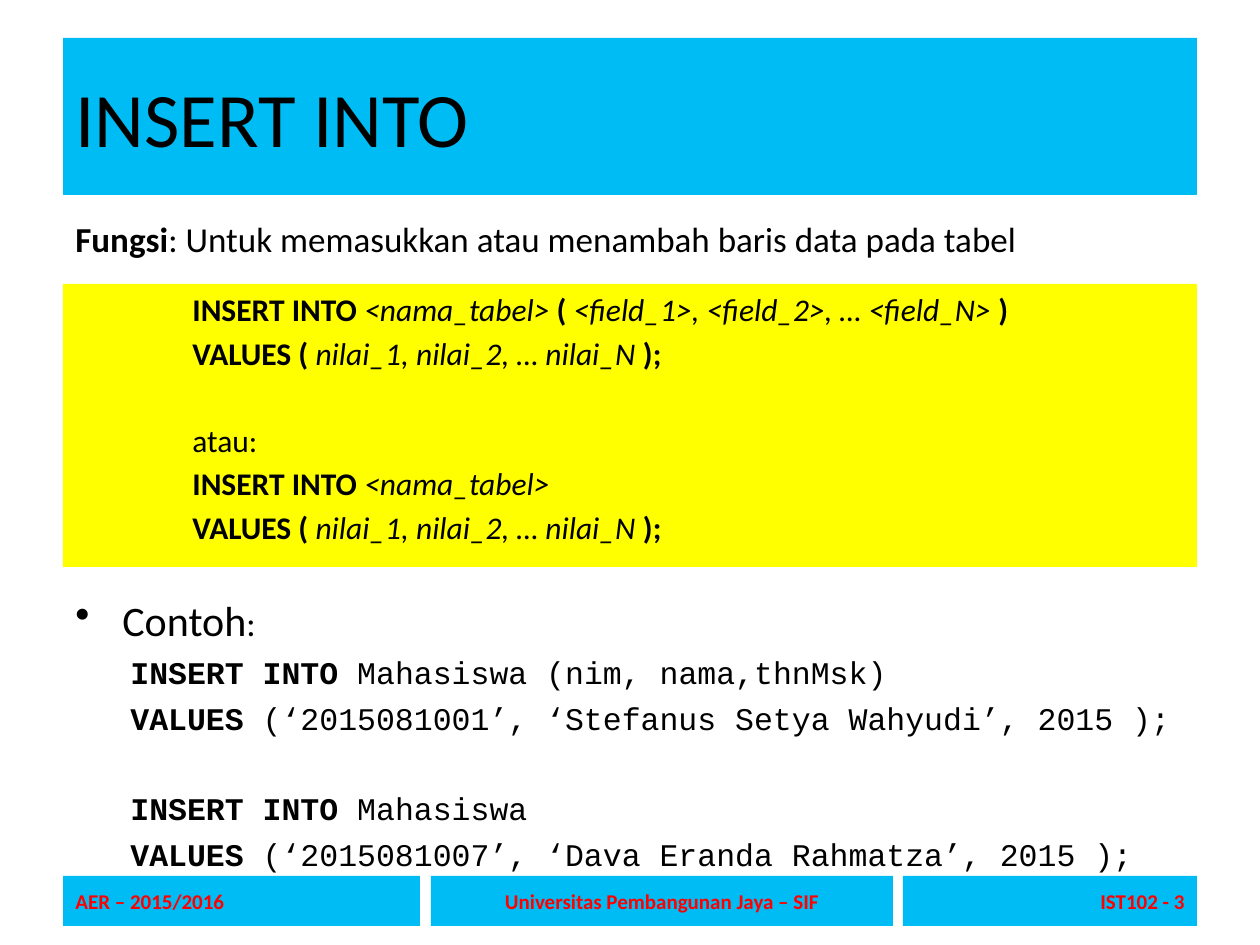
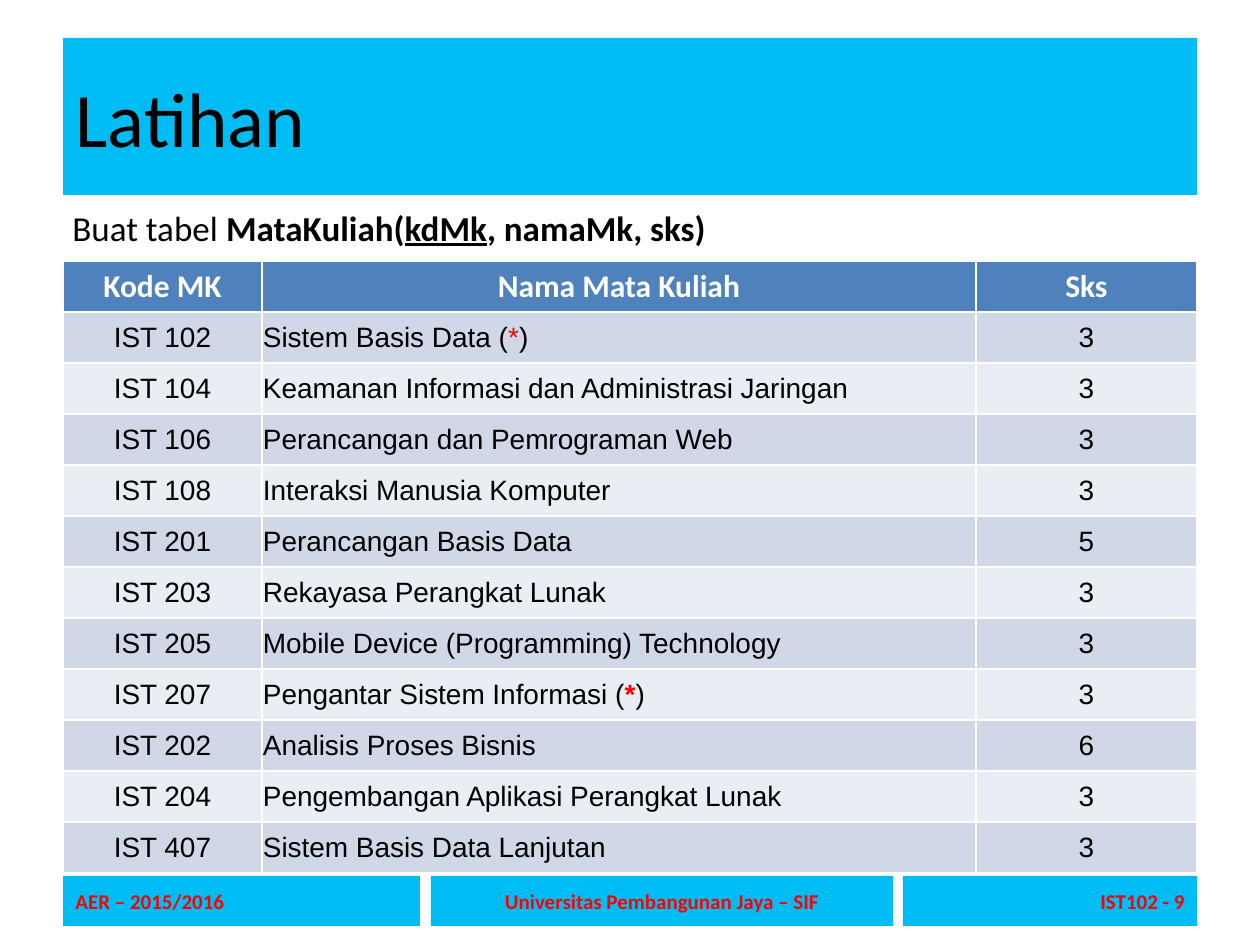
import pptx
import pptx.dml.color
import pptx.enum.shapes
import pptx.enum.text
import pptx.oxml
import pptx.oxml.ns
import pptx.util

# Shared look
SCALE = 914400 / 126  # EMU per px
CYAN, YELLOW, RED, BLACK, WHITE = "00BCF4", "FFFF00", "FF0000", "000000", "FFFFFF"
HEADER_BLUE, BANDS = "4F81BD", ("D0D8E8", "E9EDF4")
LEFT, WIDTH = 63, 1134
FOOTER_TOP, FOOTER_HEIGHT = 876, 50
FOOTER_SPANS = [(63, 357), (431, 462), (903, 294)]
ALIGN = {"l": pptx.enum.text.PP_ALIGN.LEFT, "c": pptx.enum.text.PP_ALIGN.CENTER,
         "r": pptx.enum.text.PP_ALIGN.RIGHT}
MIDDLE = pptx.enum.text.MSO_ANCHOR.MIDDLE
TOP = pptx.enum.text.MSO_ANCHOR.TOP

# Content: a paragraph is a list of (text, style); styles are b, i, u, r (red)
FOOTER = ("AER – 2015/2016", "Universitas Pembangunan Jaya – SIF", "IST102 - {}")

PURPOSE = [("Fungsi", "b"),
           (": Untuk memasukkan atau menambah baris data pada tabel", "")]
VALUES_SYNTAX = [("VALUES ( ", "b"), ("nilai_1, nilai_2, … nilai_N ", "i"), (");", "b")]
SYNTAX = [
    [
        [("INSERT INTO ", "b"), ("<nama_tabel> ", "i"), ("( ", "b"),
         ("<field_1>, <field_2>, … <field_N> ", "i"), (")", "b")],
        VALUES_SYNTAX,
    ],
    [
        [("atau:", "")],
        [("INSERT INTO ", "b"), ("<nama_tabel>", "i")],
        VALUES_SYNTAX,
    ],
]
EXAMPLES = [
    [
        [("INSERT INTO ", "b"), ("Mahasiswa (nim, nama,thnMsk)", "")],
        [("VALUES", "b"), (" (‘2015081001’, ‘Stefanus Setya Wahyudi’, 2015 );", "")],
    ],
    [
        [("INSERT INTO ", "b"), ("Mahasiswa", "")],
        [("VALUES", "b"), (" (‘2015081007’, ‘Dava Eranda Rahmatza’, 2015 );", "")],
    ],
]

TASK = [("Buat tabel ", ""), ("MataKuliah(", "b"), ("kdMk", "bu"), (", namaMk, sks)", "b")]
COURSE_HEADER = ("Kode MK", "Nama Mata Kuliah", "Sks")
COURSES = [
    ("IST 102", [("Sistem Basis Data (", ""), ("*", "r"), (")", "")], "3"),
    ("IST 104", "Keamanan Informasi dan Administrasi Jaringan", "3"),
    ("IST 106", "Perancangan dan Pemrograman Web", "3"),
    ("IST 108", "Interaksi Manusia Komputer", "3"),
    ("IST 201", "Perancangan Basis Data", "5"),
    ("IST 203", "Rekayasa Perangkat Lunak", "3"),
    ("IST 205", "Mobile Device (Programming) Technology", "3"),
    ("IST 207", [("Pengantar Sistem Informasi (", ""), ("*", "br"), (")", "")], "3"),
    ("IST 202", "Analisis Proses Bisnis", "6"),
    ("IST 204", "Pengembangan Aplikasi Perangkat Lunak", "3"),
    ("IST 407", "Sistem Basis Data Lanjutan", "3"),
]
COLUMN_WIDTHS = (199, 714, 221)
ROW_HEIGHT = 51


# Helpers
def px(n):
    return pptx.util.Emu(round(n * SCALE))


def rgb(color):
    return pptx.dml.color.RGBColor.from_string(color)


def fill(target, color):
    target.fill.solid()
    target.fill.fore_color.rgb = rgb(color)


def write(tf, text, size=18, font="Calibri", color=BLACK, bold=False, align="l",
          before=0, indent=0, bullet=None):
    """Fill the empty first paragraph, or add one, with a string or styled runs."""
    p = tf.paragraphs[-1]
    if p.runs:
        p = tf.add_paragraph()
    p.alignment = ALIGN[align]
    p.space_before = pptx.util.Pt(before)
    p_pr = p._p.get_or_add_pPr()
    p_pr.set("marL", str(px(indent)))
    p_pr.set("indent", str(px(-indent if bullet else 0)))
    if bullet:
        mark = pptx.oxml.parse_xml(
            f'<a:buChar {pptx.oxml.ns.nsdecls("a")} char="{bullet}"/>')
        p_pr.append(mark)
    for part, style in [(text, "")] if isinstance(text, str) else text:
        r = p.add_run()
        r.text = part
        r.font.name = font
        r.font.size = pptx.util.Pt(size)
        r.font.bold = bold or "b" in style
        r.font.italic = "i" in style
        r.font.underline = "u" in style
        r.font.color.rgb = rgb(RED if "r" in style else color)
    return p


def write_groups(tf, groups, before, gap, **fmt):
    """Write groups of lines, with a wider space above each later group."""
    for g, lines in enumerate(groups):
        for n, line in enumerate(lines):
            write(tf, line, before=gap if g and n == 0 else before, **fmt)


def add_box(s, x, y, w, h, color, anchor=MIDDLE):
    sp = s.shapes.add_shape(pptx.enum.shapes.MSO_SHAPE.RECTANGLE,
                            px(x), px(y), px(w), px(h))
    sp.shadow.inherit = False
    fill(sp, color)
    sp.line.fill.background()
    sp.text_frame.word_wrap = True
    sp.text_frame.vertical_anchor = anchor
    return sp.text_frame


def add_text(s, x, y, w, h, wrap=True):
    tf = s.shapes.add_textbox(px(x), px(y), px(w), px(h)).text_frame
    tf.word_wrap = wrap
    return tf


def add_slide(prs, title, number):
    s = prs.slides.add_slide(prs.slide_layouts[5])
    sp = s.shapes.title
    sp.left, sp.top, sp.width, sp.height = px(LEFT), px(38), px(WIDTH), px(157)
    fill(sp, CYAN)
    sp.text_frame.vertical_anchor = MIDDLE
    write(sp.text_frame, title, size=44)
    for (x, w), text, align in zip(FOOTER_SPANS, FOOTER, "lcr"):
        tf = add_box(s, x, FOOTER_TOP, w, FOOTER_HEIGHT, CYAN)
        write(tf, text.format(number), size=12, color=RED, bold=True, align=align)
    return s


# Slides
def insert_slide(prs):
    s = add_slide(prs, "INSERT INTO", 3)
    write(add_text(s, LEFT, 211, WIDTH, 55), PURPOSE, size=20)

    tf = add_box(s, LEFT, 284, WIDTH, 283, YELLOW, TOP)
    write_groups(tf, SYNTAX, before=3.2, gap=28.3, indent=117)

    tf = add_text(s, LEFT, 588, WIDTH, 273)
    p = write(tf, [("Contoh", ""), (":", "")], size=24, indent=47, bullet="•")
    p.runs[-1].font.size = pptx.util.Pt(20)
    write_groups(tf, EXAMPLES, before=4.7, gap=29.8, indent=55, font="Courier New")


def exercise_slide(prs):
    s = add_slide(prs, "Latihan", 9)
    write(add_text(s, 60, 200, 668, 55, wrap=False), TASK, size=20)

    rows = [COURSE_HEADER] + COURSES
    table = s.shapes.add_table(len(rows), len(COLUMN_WIDTHS), px(LEFT), px(261),
                               px(WIDTH), px(ROW_HEIGHT * len(rows))).table
    for column, w in zip(table.columns, COLUMN_WIDTHS):
        column.width = px(w)
    for i, row in enumerate(rows):
        for cell, text, align in zip(table.rows[i].cells, row, "clc"):
            if i == 0:
                fill(cell, HEADER_BLUE)
                write(cell.text_frame, text, color=WHITE, bold=True, align="c")
                continue
            fill(cell, BANDS[(i - 1) % 2])
            cell.vertical_anchor = MIDDLE
            cell.margin_left = cell.margin_right = cell.margin_top = px(1)
            cell.margin_bottom = 0
            write(cell.text_frame, text, size=16, font="Arial", align=align)


def main():
    prs = pptx.Presentation()
    prs.slide_width, prs.slide_height = px(1260), px(945)
    insert_slide(prs)
    exercise_slide(prs)
    prs.save("out.pptx")


if __name__ == "__main__":
    main()
